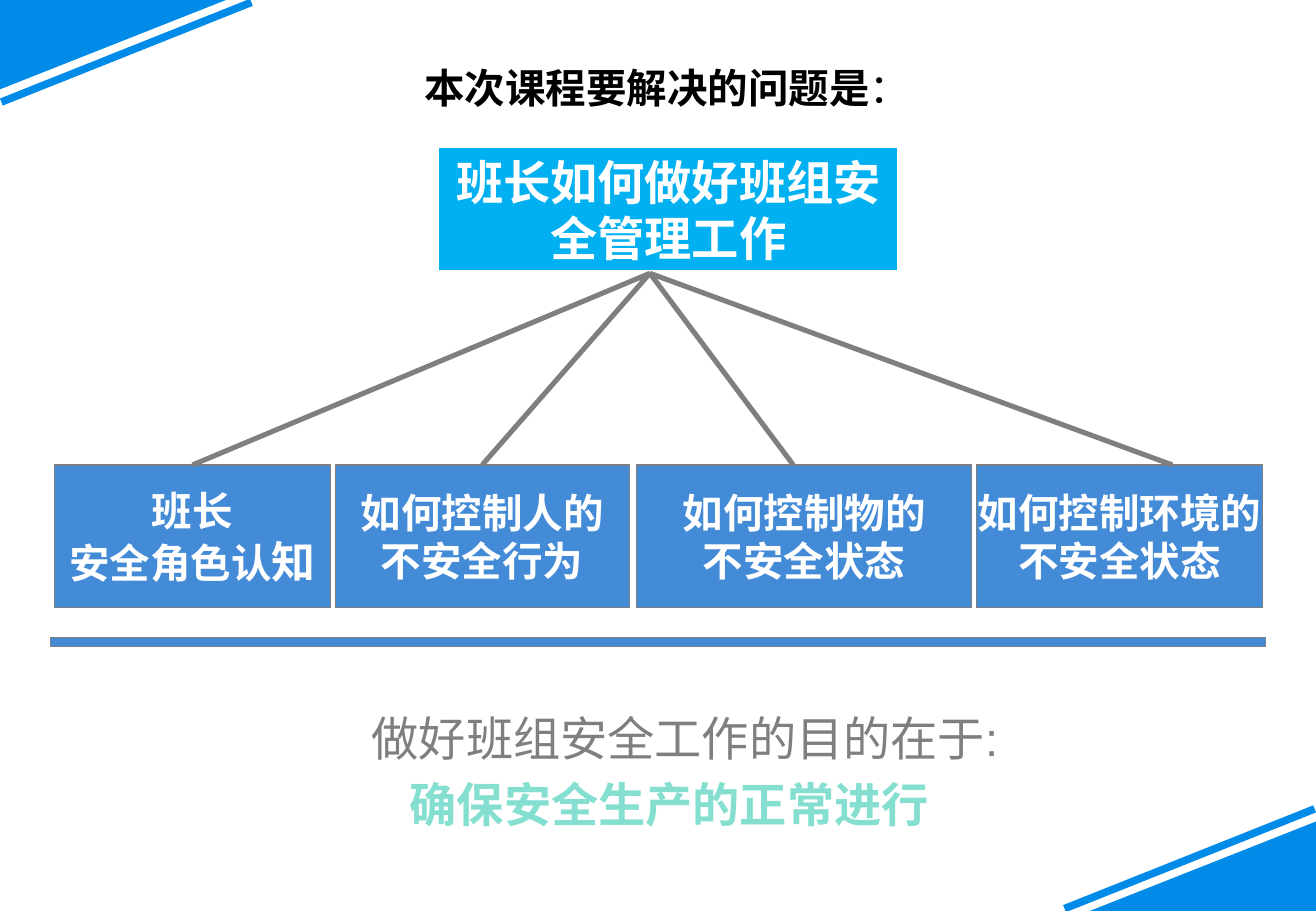
from lxml.etree import SubElement
from pptx import Presentation
from pptx.dml.color import RGBColor
from pptx.enum.shapes import MSO_CONNECTOR, MSO_SHAPE
from pptx.enum.text import MSO_ANCHOR, MSO_AUTO_SIZE, PP_ALIGN
from pptx.oxml.ns import qn
from pptx.util import Pt

WIDTH, HEIGHT = 780, 540
CORNER_BLUE, BOX_BLUE, SKY = "018BE9", "438AD7", "00B0F0"
GREY, MINT, WHITE, BLACK = "7F7F7F", "85DFD0", "FFFFFF", "000000"
TOPIC_TOP, TOPIC_HEIGHT = 275.6, 84.6
HUB = (385.2, 162)

TOPICS = [
    (32.4, 163.4, [[("班长", {})], [("安全角色认", {}), ("知", {"size": Pt(26)})]]),
    (198.7, 174.2, [[("如何控制人的", {})], [("不安全行为", {})]]),
    (377.3, 198.7, [[("如何控制物的", {})], [("不安全状态", {})]]),
    (578.9, 169.2, [[("如何控制环境的", {})], [("不安全状态", {})]]),
]
LINE_ENDS = [115.2, 285.8, 470.2, 694.8]


def rgb(value):
    """Turn a hex string into a colour."""
    return RGBColor.from_string(value)


def apply(target, values):
    """Set each named attribute on the target."""
    for name, value in values.items():
        setattr(target, name, value)


def write(box, paras, color, frame_format, **font_format):
    """Fill a box with paragraphs of (text, font changes) spans."""
    frame = box.text_frame
    apply(frame, frame_format)
    for index, spans in enumerate(paras):
        para = frame.add_paragraph() if index else frame.paragraphs[0]
        para.alignment = PP_ALIGN.CENTER
        for text, changes in spans:
            span = para.add_run()
            span.text = text
            font = span.font
            apply(font, {"name": "Arial", "bold": True, **font_format, **changes})
            font.color.rgb = rgb(color)
            SubElement(span._r.rPr, qn("a:ea")).set("typeface", font.name)


def add_label(page, bounds, paras, color, size, wrap=True, **changes):
    """Add a text box."""
    box = page.shapes.add_textbox(*map(Pt, bounds))
    fit = MSO_AUTO_SIZE.NONE if wrap else MSO_AUTO_SIZE.SHAPE_TO_FIT_TEXT
    write(box, paras, color, {"word_wrap": wrap, "auto_size": fit}, size=Pt(size), **changes)


def add_box(page, kind, bounds, fill, outline):
    """Add a filled shape with a thin outline."""
    box = page.shapes.add_shape(kind, *map(Pt, bounds))
    box.shadow.inherit = False
    box.fill.solid()
    box.fill.fore_color.rgb = rgb(fill)
    box.line.color.rgb = rgb(outline)
    box.line.width = Pt(0.75)
    return box


def add_line(page, start, end, color, width):
    """Add a straight line without a shadow."""
    line = page.shapes.add_connector(MSO_CONNECTOR.STRAIGHT, *map(Pt, (*start, *end)))
    line.line.color.rgb = rgb(color)
    line.line.width = Pt(width)
    SubElement(line._element.spPr, qn("a:effectLst"))
    return line


def add_corner(page, place):
    """Add a corner triangle and its stripe, with points mapped by place."""
    first, *others = [place(*point) for point in [(0, 53.3), (0, 0), (133.9, 0)]]
    builder = page.shapes.build_freeform(*first, scale=Pt(1))
    builder.add_line_segments(others, close=True)
    triangle = builder.convert_to_shape()
    triangle.shadow.inherit = False
    triangle.fill.solid()
    triangle.fill.fore_color.rgb = rgb(CORNER_BLUE)
    triangle.line.fill.background()
    add_line(page, place(0.8, 60.5), place(149, 1.4), CORNER_BLUE, 4.5)


def add_topics(page):
    """Add the four topics and the lines that fan out to them."""
    for (left, width, paras), end in zip(TOPICS, LINE_ENDS):
        bounds = (left, TOPIC_TOP, width, TOPIC_HEIGHT)
        box = add_box(page, MSO_SHAPE.FLOWCHART_PROCESS, bounds, BOX_BLUE, GREY)
        frame_format = {"word_wrap": False, "vertical_anchor": MSO_ANCHOR.MIDDLE}
        write(box, paras, WHITE, frame_format, size=Pt(24))
        line = add_line(page, HUB, (end, TOPIC_TOP), GREY, 3)
        if abs(left + width / 2 - end) < 2:
            line.end_connect(box, 0)


def main():
    """Build the slide and save it."""
    deck = Presentation()
    apply(deck, {"slide_width": Pt(WIDTH), "slide_height": Pt(HEIGHT)})
    page = deck.slides.add_slide(deck.slide_layouts[6])
    add_corner(page, lambda x, y: (WIDTH - x, HEIGHT - y))
    add_corner(page, lambda x, y: (x, y))
    add_box(page, MSO_SHAPE.FLOWCHART_PROCESS, (30, 378, 720, 5.4), BOX_BLUE, GREY)
    add_label(page, (139, 417, 534, 41), [[("做好班组安全工作的目的在于:", {})]], GREY, 28, bold=False)
    add_label(page, (234.7, 455.8, 324, 41), [[("确保安全生产的正常进行", {})]], MINT, 28, wrap=False)
    goal = add_box(page, MSO_SHAPE.RECTANGLE, (260, 87.1, 272.2, 73.4), SKY, WHITE)
    goal_format = {"word_wrap": True, "vertical_anchor": MSO_ANCHOR.TOP}
    write(goal, [[("班长如何做好班组安全管理工作", {})]], WHITE, goal_format, size=Pt(28))
    add_topics(page)
    colon = ("：", {"name": "Noto Sans CJK SC", "bold": False})
    add_label(page, (228.2, 33.8, 334.8, 27.4), [[("本次课程要解决的问题是", {}), colon]], BLACK, 24)
    deck.save("out.pptx")


if __name__ == "__main__":
    main()
